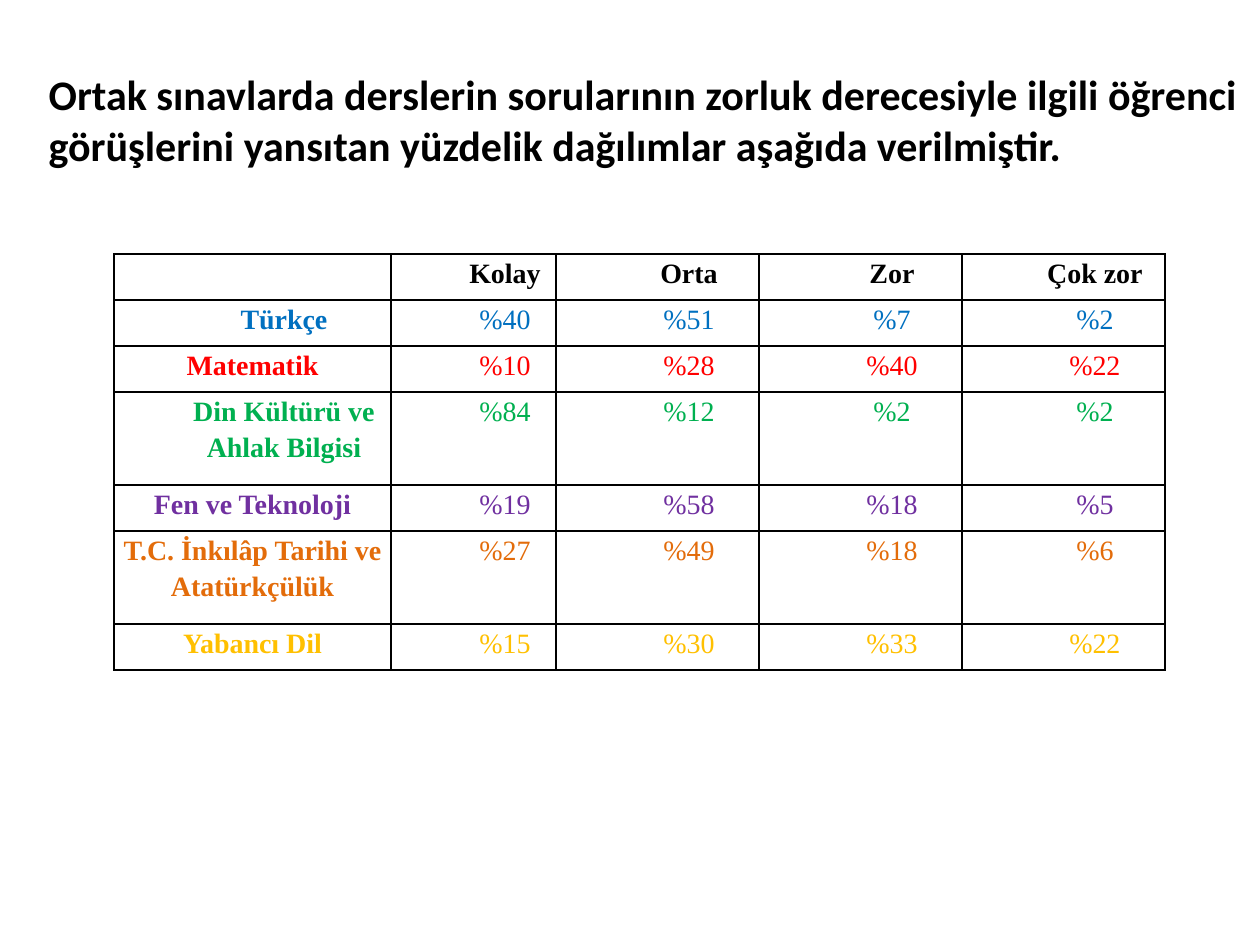
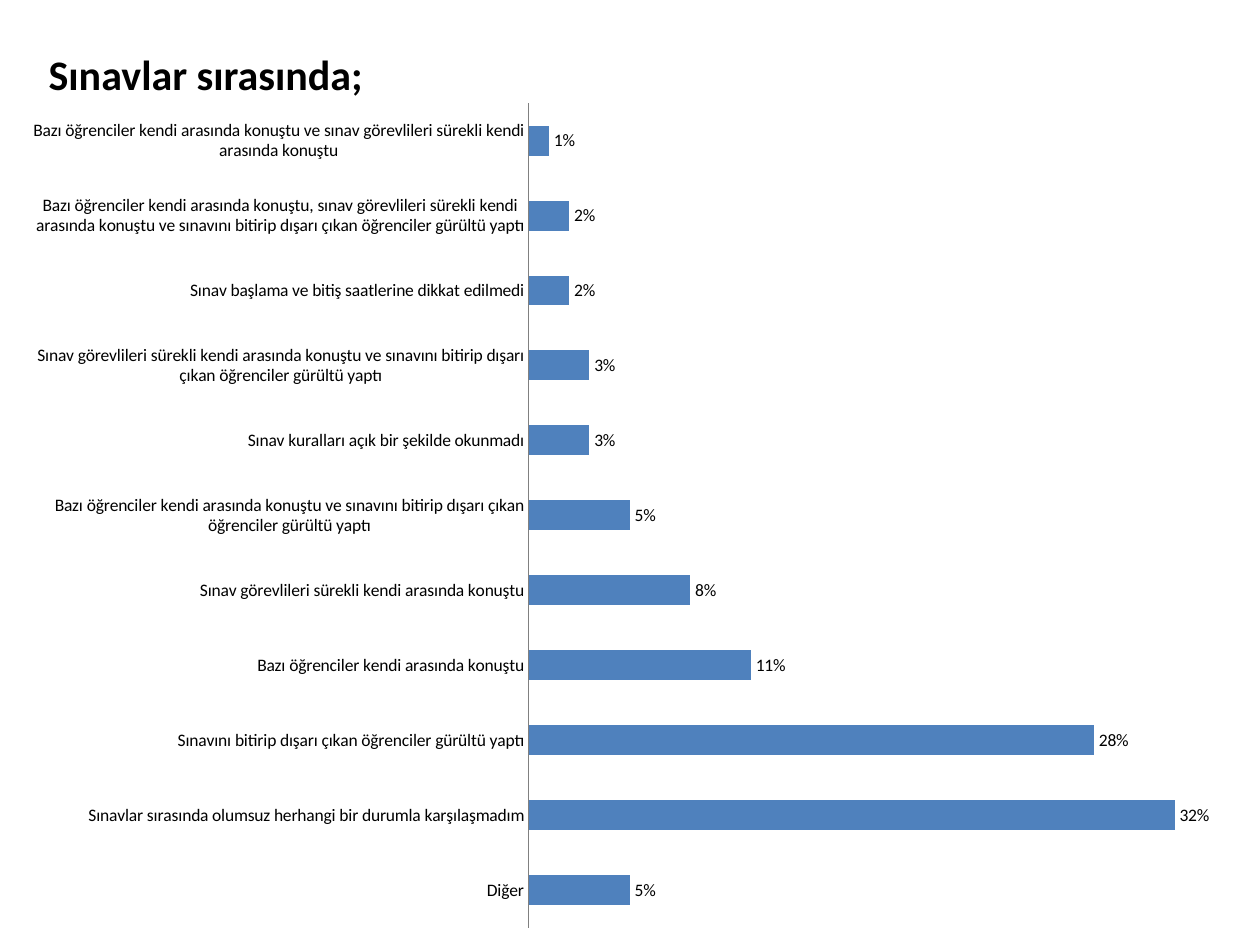
from dataclasses import dataclass

from lxml.etree import SubElement
from pptx import Presentation
from pptx.chart.data import CategoryChartData
from pptx.dml.color import RGBColor
from pptx.enum.chart import XL_CHART_TYPE, XL_LABEL_POSITION, XL_TICK_LABEL_POSITION, XL_TICK_MARK
from pptx.enum.text import MSO_ANCHOR, MSO_AUTO_SIZE, PP_ALIGN
from pptx.oxml import parse_xml
from pptx.oxml.ns import nsdecls, qn
from pptx.util import Emu, Pt


@dataclass(frozen=True)
class Theme:
    heading_font: str = "Calibri"
    table_font: str = "Times New Roman"
    heading_size: int = 24
    table_size: int = 16
    chart_size: int = 10
    ink: str = "000000"
    bar: str = "4F81BD"
    axis: str = "808080"
    turkish: str = "0070C0"
    maths: str = "FF0000"
    religion: str = "00B050"
    science: str = "7030A0"
    history: str = "E36C0A"
    language: str = "FFC000"


theme = Theme()
PX_PER_INCH = 126


def px(length):
    """Turn px into EMU."""
    return Emu(round(length * 914400 / PX_PER_INCH))


def add_titled_slide(text, top, height):
    slide = deck.slides.add_slide(deck.slide_layouts[5])
    heading = slide.shapes.title
    heading.left, heading.top, heading.width, heading.height = px(36), px(top), px(1224), px(height)
    frame = heading.text_frame
    frame.auto_size = MSO_AUTO_SIZE.NONE
    frame.word_wrap = True
    frame.vertical_anchor = MSO_ANCHOR.BOTTOM
    paragraph = frame.paragraphs[0]
    paragraph.alignment = PP_ALIGN.LEFT
    run = paragraph.add_run()
    run.text = text
    run.font.name = theme.heading_font
    run.font.size = Pt(theme.heading_size)
    run.font.bold = True
    run.font.color.rgb = RGBColor.from_string(theme.ink)
    return slide


deck = Presentation()
deck.slide_width, deck.slide_height = px(1260), px(945)

# Difficulty of the exam questions by subject
difficulty_slide = add_titled_slide(
    "Ortak sınavlarda derslerin sorularının zorluk derecesiyle ilgili öğrenci "
    "görüşlerini yansıtan yüzdelik dağılımlar aşağıda verilmiştir.", 0, 176)

difficulty_rows = [
    (theme.ink, ["", "Kolay", "Orta", "Zor", "Çok zor"]),
    (theme.turkish, ["Türkçe", "%40", "%51", "%7", "%2"]),
    (theme.maths, ["Matematik", "%10", "%28", "%40", "%22"]),
    (theme.religion, ["Din Kültürü ve Ahlak Bilgisi", "%84", "%12", "%2", "%2"]),
    (theme.science, ["Fen ve Teknoloji", "%19", "%58", "%18", "%5"]),
    (theme.history, ["T.C. İnkılâp Tarihi ve Atatürkçülük", "%27", "%49", "%18", "%6"]),
    (theme.language, ["Yabancı Dil", "%15", "%30", "%33", "%22"]),
]
indented_subjects = {"Türkçe", "Din Kültürü ve Ahlak Bilgisi"}
column_widths = [277, 165, 203, 203, 203]
row_heights = [46, 46, 46, 93, 46, 93, 46]

difficulty_table = difficulty_slide.shapes.add_table(
    len(row_heights), len(column_widths), px(114), px(254),
    px(sum(column_widths)), px(sum(row_heights))).table
difficulty_table.first_row = False
difficulty_table.horz_banding = False
for column, width in zip(difficulty_table.columns, column_widths):
    column.width = px(width)
for row, height in zip(difficulty_table.rows, row_heights):
    row.height = px(height)

for row_index, (colour, entries) in enumerate(difficulty_rows):
    for column_index, entry in enumerate(entries):
        cell = difficulty_table.cell(row_index, column_index)
        cell.margin_left = cell.margin_right = px(8)
        cell.margin_top = cell.margin_bottom = 0
        cell_properties = cell._tc.get_or_add_tcPr()
        for side in ("a:lnL", "a:lnR", "a:lnT", "a:lnB"):
            border = SubElement(cell_properties, qn(side), w=str(Pt(1)))
            border_fill = SubElement(border, qn("a:solidFill"))
            SubElement(border_fill, qn("a:srgbClr"), val=theme.ink)
        cell.fill.background()
        if not entry:
            continue
        paragraph = cell.text_frame.paragraphs[0]
        paragraph.alignment = PP_ALIGN.CENTER
        paragraph.line_spacing = 1.15
        if column_index > 0 or entry in indented_subjects:
            paragraph._p.get_or_add_pPr().set("marL", str(px(63)))
        run = paragraph.add_run()
        run.text = entry
        run.font.name = theme.table_font
        run.font.size = Pt(theme.table_size)
        run.font.bold = row_index == 0 or column_index == 0
        run.font.color.rgb = RGBColor.from_string(colour)

# What happened during the exams
events_slide = add_titled_slide("Sınavlar sırasında;", 42, 63)

event_shares = [
    ("Diğer", 0.05),
    ("Sınavlar sırasında olumsuz herhangi bir durumla karşılaşmadım", 0.32),
    ("Sınavını bitirip dışarı çıkan öğrenciler gürültü yaptı", 0.28),
    ("Bazı öğrenciler kendi arasında konuştu", 0.11),
    ("Sınav görevlileri sürekli kendi arasında konuştu", 0.08),
    ("Bazı öğrenciler kendi arasında konuştu ve sınavını bitirip dışarı çıkan "
     "öğrenciler gürültü yaptı", 0.05),
    ("Sınav kuralları açık bir şekilde okunmadı", 0.03),
    ("Sınav görevlileri sürekli kendi arasında konuştu ve sınavını bitirip dışarı "
     "çıkan öğrenciler gürültü yaptı", 0.03),
    ("Sınav başlama ve bitiş saatlerine dikkat edilmedi", 0.02),
    ("Bazı öğrenciler kendi arasında konuştu, sınav görevlileri sürekli kendi "
     "arasında konuştu ve sınavını bitirip dışarı çıkan öğrenciler gürültü yaptı", 0.02),
    ("Bazı öğrenciler kendi arasında konuştu ve sınav görevlileri sürekli kendi "
     "arasında konuştu", 0.01),
]
event_data = CategoryChartData(number_format="0%")
event_data.categories = [event for event, share in event_shares]
event_data.add_series("Series 1", [share for event, share in event_shares])

events_chart = events_slide.shapes.add_chart(
    XL_CHART_TYPE.BAR_CLUSTERED, px(25), px(86), px(1235), px(859), event_data).chart
events_chart.has_title = False
events_chart.has_legend = False
events_chart.font.name = theme.heading_font
events_chart.font.size = Pt(theme.chart_size)
events_chart.font.color.rgb = RGBColor.from_string(theme.ink)

event_axis = events_chart.category_axis
event_axis.major_tick_mark = XL_TICK_MARK.NONE
event_axis.minor_tick_mark = XL_TICK_MARK.NONE
event_axis.tick_label_position = XL_TICK_LABEL_POSITION.NEXT_TO_AXIS
event_axis.format.line.color.rgb = RGBColor.from_string(theme.axis)
event_axis.format.line.width = Pt(0.75)

share_axis = events_chart.value_axis
share_axis.visible = False
share_axis.has_major_gridlines = False
share_axis.minimum_scale = 0
share_axis.maximum_scale = 0.35

event_bars = events_chart.plots[0]
event_bars.gap_width = 150
event_bars.overlap = -25
event_bars.vary_by_categories = False
event_bars.series[0].format.fill.solid()
event_bars.series[0].format.fill.fore_color.rgb = RGBColor.from_string(theme.bar)
event_bars.has_data_labels = True
share_labels = event_bars.data_labels
share_labels.show_value = True
share_labels.number_format = "0%"
share_labels.number_format_is_linked = False
share_labels.position = XL_LABEL_POSITION.OUTSIDE_END

plot_area = events_chart._chartSpace.chart.plotArea
for automatic_layout in plot_area.findall(qn("c:layout")):
    plot_area.remove(automatic_layout)
plot_area.insert(0, parse_xml(
    f'<c:layout {nsdecls("c")}><c:manualLayout><c:layoutTarget val="inner"/>'
    '<c:xMode val="edge"/><c:yMode val="edge"/>'
    '<c:x val="0.408"/><c:y val="0.02"/><c:w val="0.572"/><c:h val="0.96"/>'
    '</c:manualLayout></c:layout>'))

deck.save("out.pptx")
